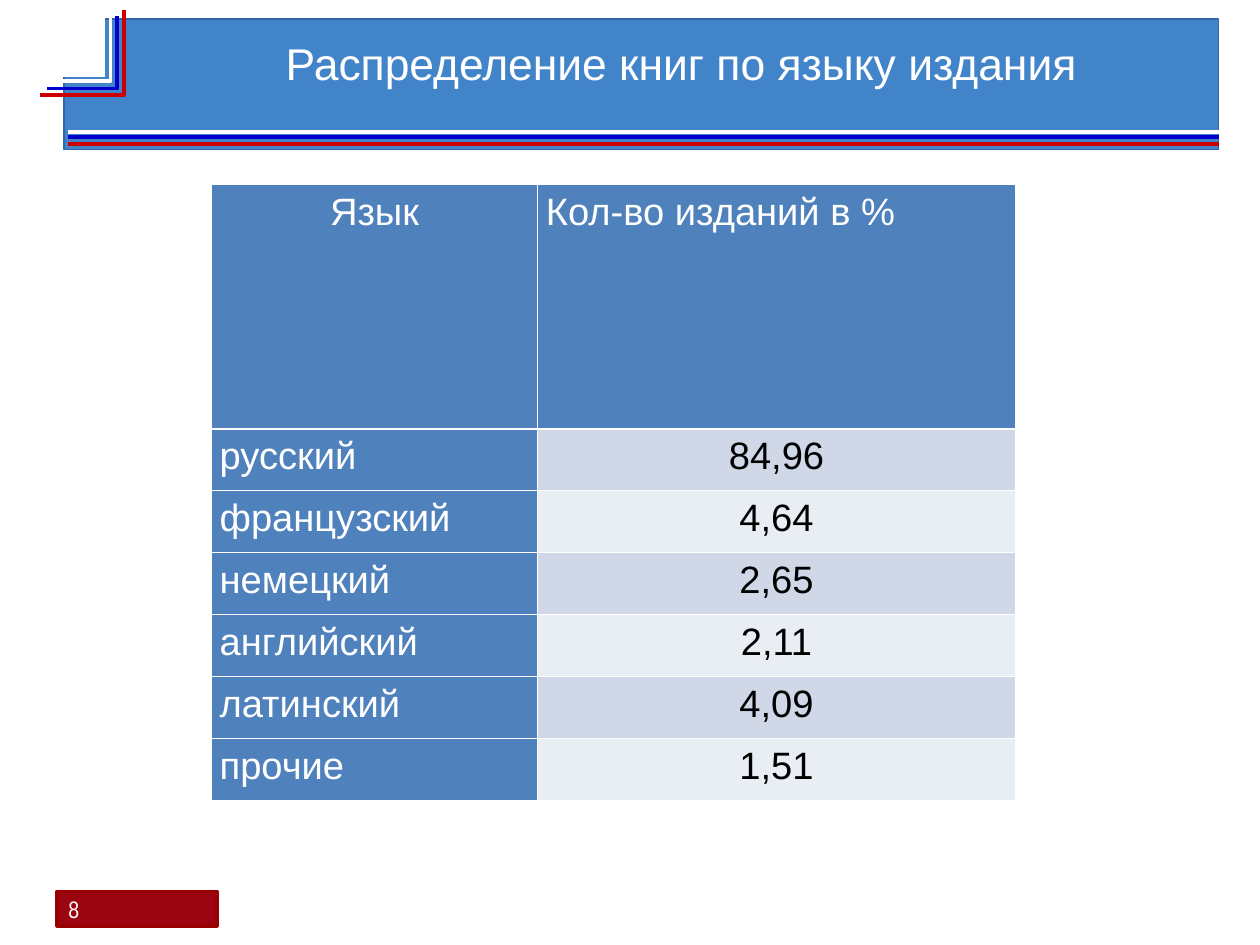
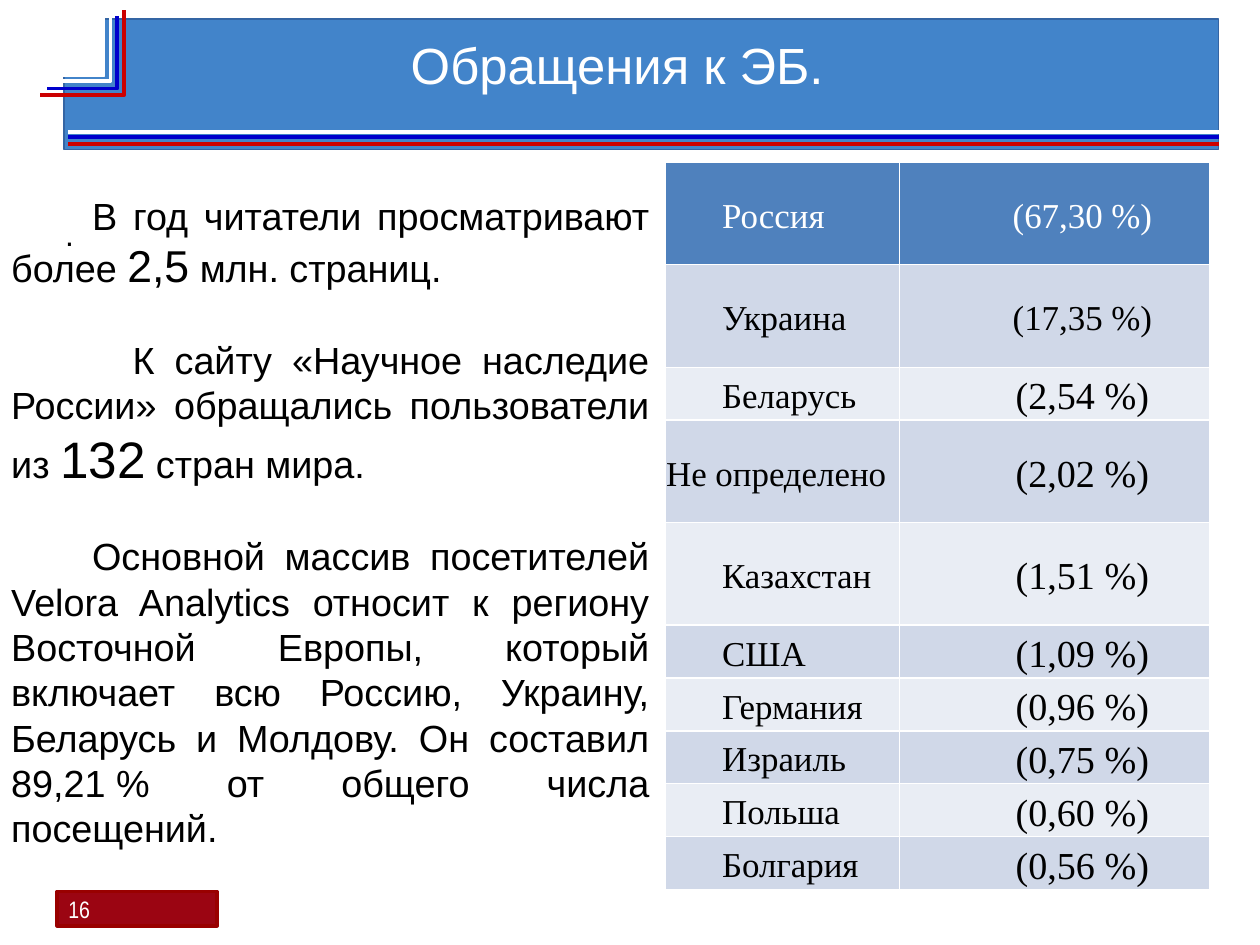
from dataclasses import dataclass, field
from typing import Any, NamedTuple

from lxml.etree import SubElement as Sub
from pptx import Presentation
from pptx.dml.color import RGBColor as Rgb
from pptx.enum.shapes import MSO_CONNECTOR as Link, MSO_SHAPE as Form
from pptx.enum.text import MSO_ANCHOR as Anchor, PP_ALIGN as Align
from pptx.oxml.ns import qn
from pptx.util import Pt

HUES = {
    "white": "FFFFFF", "black": "000000", "band": "4284CA", "edge": "3465A4",
    "blue": "0000CC", "red": "CC0000", "badge": "9B0512", "rim": "990000",
    "head": "4F81BD", "odd": "D0D8E8", "even": "E9EDF4",
}
STROKE = 2.3
HARD = chr(160)  # no-break space


class Box(NamedTuple):
    x: float
    y: float
    w: float
    h: float

    def emu(self) -> list[int]:
        return [Pt(v) for v in self]


class Elbow(NamedTuple):
    """A corner line: down the right side, then left along the foot."""
    left: float
    top: float
    right: float
    foot: float
    hue: str


class Rule(NamedTuple):
    y: float
    hue: str


class Run(NamedTuple):
    text: str
    size: float
    hue: str = "black"
    font: str = "Arial"


@dataclass
class Para:
    runs: list[Run]
    indent: float = 0
    form: dict[str, Any] = field(default_factory=dict)


@dataclass
class Cell:
    para: Para
    fill: str


@dataclass
class Grid:
    box: Box
    cols: list[float]
    rows: list[float]
    cells: list[list[Cell]]
    pad: tuple[float, float]
    anchor: Anchor


RULES = [Rule(83, "white"), Rule(86.5, "blue"), Rule(90.7, "red")]
BACK = [Elbow(25.2, 5, 69.6, 51.1, "white")]
FRONT = [Elbow(25.2, 6.5, 78.2, 60, "red"), Elbow(29.5, 10, 73.8, 55.8, "blue")]


def rgb(hue: str) -> Rgb:
    return Rgb.from_string(HUES[hue])


def assign(item: Any, form: dict[str, Any]) -> None:
    for key, value in form.items():
        setattr(item, key, value)


def stroke(shape: Any, hue: str, width: float) -> None:
    shape.line.color.rgb = rgb(hue)
    shape.line.width = Pt(width)


def add_rect(slide: Any, box: Box, fill: str, edge: str, width: float = 0.75) -> None:
    rect = slide.shapes.add_shape(Form.RECTANGLE, *box.emu())
    rect.shadow.inherit = False
    rect.fill.solid()
    rect.fill.fore_color.rgb = rgb(fill)
    stroke(rect, edge, width)


def add_elbow(slide: Any, elbow: Elbow) -> None:
    left, top, right, foot = [Pt(v) for v in elbow[:4]]
    path = slide.shapes.build_freeform(right, top)
    path.add_line_segments([(right, foot), (left, foot)], close=False)
    shape = path.convert_to_shape()
    shape.shadow.inherit = False
    shape.fill.background()
    stroke(shape, elbow.hue, STROKE)


def add_rule(slide: Any, rule: Rule) -> None:
    line = slide.shapes.add_connector(
        Link.STRAIGHT, Pt(43), Pt(rule.y), Pt(768.2), Pt(rule.y))
    stroke(line, rule.hue, STROKE)
    Sub(line._element.spPr, qn("a:effectLst"))


def write(frame: Any, paras: list[Para]) -> None:
    for i, para in enumerate(paras):
        item = frame.add_paragraph() if i else frame.paragraphs[0]
        assign(item, para.form)
        if para.indent:
            item._p.get_or_add_pPr().set("indent", str(Pt(para.indent)))
        for part in para.runs:
            run = item.add_run()
            run.text = part.text
            assign(run.font, {"size": Pt(part.size), "name": part.font, "bold": False})
            run.font.color.rgb = rgb(part.hue)


def add_text(slide: Any, box: Box, paras: list[Para], pad: tuple[float, float] = (0, 0),
             anchor: Anchor = Anchor.TOP) -> None:
    frame = slide.shapes.add_textbox(*box.emu()).text_frame
    across, down = Pt(pad[0]), Pt(pad[1])
    assign(frame, {
        "word_wrap": True, "vertical_anchor": anchor,
        "margin_left": across, "margin_right": across,
        "margin_top": down, "margin_bottom": down,
    })
    write(frame, paras)


def add_edges(cell: Any) -> None:
    """Draw thin white cell borders."""
    props = cell._tc.get_or_add_tcPr()
    for side in "LRTB":
        line = Sub(props, qn(f"a:ln{side}"), w=str(Pt(1)))
        Sub(Sub(line, qn("a:solidFill")), qn("a:srgbClr"), val=HUES["white"])


def add_grid(slide: Any, grid: Grid) -> None:
    table = slide.shapes.add_table(
        len(grid.rows), len(grid.cols), *grid.box.emu()).table
    assign(table, {"first_row": False, "horz_banding": False})
    for col, width in zip(table.columns, grid.cols):
        col.width = Pt(width)
    across, down = Pt(grid.pad[0]), Pt(grid.pad[1])
    for r, (height, line) in enumerate(zip(grid.rows, grid.cells)):
        table.rows[r].height = Pt(height)
        for c, data in enumerate(line):
            cell = table.cell(r, c)
            add_edges(cell)
            assign(cell, {
                "margin_left": across, "margin_right": across,
                "margin_top": down, "margin_bottom": down,
                "vertical_anchor": grid.anchor,
            })
            cell.fill.solid()
            cell.fill.fore_color.rgb = rgb(data.fill)
            write(cell.text_frame, [data.para])


def shade(row: int) -> str:
    return "head" if row == 0 else ("odd" if row % 2 else "even")


def add_slide(deck: Any, number: int, title: Run, box: Box, align: Align) -> Any:
    """Add a blank slide with the shared band, page badge and title."""
    slide = deck.slides.add_slide(deck.slide_layouts[6])
    add_rect(slide, Box(36, 561.6, 100.8, 21.6), "badge", "rim", STROKE)
    page = Para([Run(str(number), 15, "white", "Arial Narrow")])
    add_text(slide, Box(36, 560.4, 96.5, 24.5), [page], (7.2, 3.6), Anchor.MIDDLE)
    add_rect(slide, Box(40.3, 12, 727.2, 82), "band", "edge")
    for elbow in BACK:
        add_elbow(slide, elbow)
    for rule in RULES:
        add_rule(slide, rule)
    for elbow in FRONT:
        add_elbow(slide, elbow)
    add_rect(slide, Box(13, 4.3, 52.6, 43.9), "white", "white")
    add_text(slide, box, [Para([title], form={"alignment": align})],
             anchor=Anchor.MIDDLE)
    return slide


def add_books(deck: Any) -> None:
    slide = add_slide(deck, 8, Run("Распределение книг по языку издания", 28, "white"),
                      Box(180, 16, 503, 47), Align.LEFT)
    data = [
        ("Язык", "Кол-во изданий в %"), ("русский", "84,96"),
        ("французский", "4,64"), ("немецкий", "2,65"), ("английский", "2,11"),
        ("латинский", "4,09"), ("прочие", "1,51"),
    ]
    cells = []
    for r, line in enumerate(data):
        row = []
        for c, text in enumerate(line):
            dark = r == 0 or c == 0
            align = Align.CENTER if (r == 0) == (c == 0) else Align.LEFT
            form = {"alignment": align, "line_spacing": 1.15}
            para = Para([Run(text, 24, "white" if dark else "black")], form=form)
            row.append(Cell(para, "head" if dark else shade(r)))
        cells.append(row)
    rows = [154] + [39] * (len(data) - 1)
    add_grid(slide, Grid(Box(133.2, 116.2, 506.5, sum(rows)), [205.5, 301], rows, cells,
                         (5.2, 0), Anchor.TOP))


def add_visits(deck: Any) -> None:
    slide = add_slide(deck, 16, Run("Обращения к ЭБ.", 32, "white"),
                      Box(29, 16, 720, 49), Align.CENTER)
    add_text(slide, Box(41, 135.4, 714, 414), [Para([Run(".", 20)])])

    size = 23.8
    form = {"alignment": Align.JUSTIFY}
    later = {**form, "space_before": Pt(28)}
    add_text(slide, Box(0, 118, 416, 417), [
        Para([Run("В год читатели просматривают более ", size), Run("2,5", 28.1),
              Run(" млн. страниц.", size)], 51, form),
        Para([Run("К сайту «Научное наследие России» обращались пользователи из ", size),
              Run("132", 32.3), Run(" стран мира.", size)], 76.5, later),
        Para([Run("Основной массив посетителей Velora Analytics относит к региону "
                  "Восточной Европы, который включает всю Россию, Украину, Беларусь "
                  f"и Молдову. Он составил 89,21{HARD}% от общего числа посещений.",
                  size)], 51, later),
    ], (7.2, 3.6))

    tall, low = 64.6, 33.3
    data = [
        ("Россия", "67,30", tall), ("Украина", "17,35", tall),
        ("Беларусь", "2,54", low), ("Не определено", "2,02", tall),
        ("Казахстан", "1,51", tall), ("США", "1,09", low),
        ("Германия", "0,96", low), ("Израиль", "0,75", low),
        ("Польша", "0,60", low), ("Болгария", "0,56", low),
    ]
    cells = []
    for r, (land, share, _) in enumerate(data):
        hue, face = "black" if r else "white", "Times New Roman"
        name = Para([Run(land, 22, hue, face)], 0 if " " in land else 35.3,
                    {"line_spacing": 1.15})
        part = Para([Run(f"({share}{HARD}%)", 22 if r < 2 else 24, hue, face)], 35.3,
                    {"alignment": Align.CENTER, "line_spacing": 1.15})
        cells.append([Cell(name, shade(r)), Cell(part, shade(r))])
    rows = [line[2] for line in data]
    add_grid(slide, Grid(Box(419, 102.2, 343, sum(rows)), [147.5, 195.5], rows, cells,
                         (0.7, 0.1), Anchor.MIDDLE))


def main() -> None:
    deck = Presentation()
    assign(deck, {"slide_width": Pt(793.75), "slide_height": Pt(595.25)})
    add_books(deck)
    add_visits(deck)
    deck.save("out.pptx")


if __name__ == "__main__":
    main()
